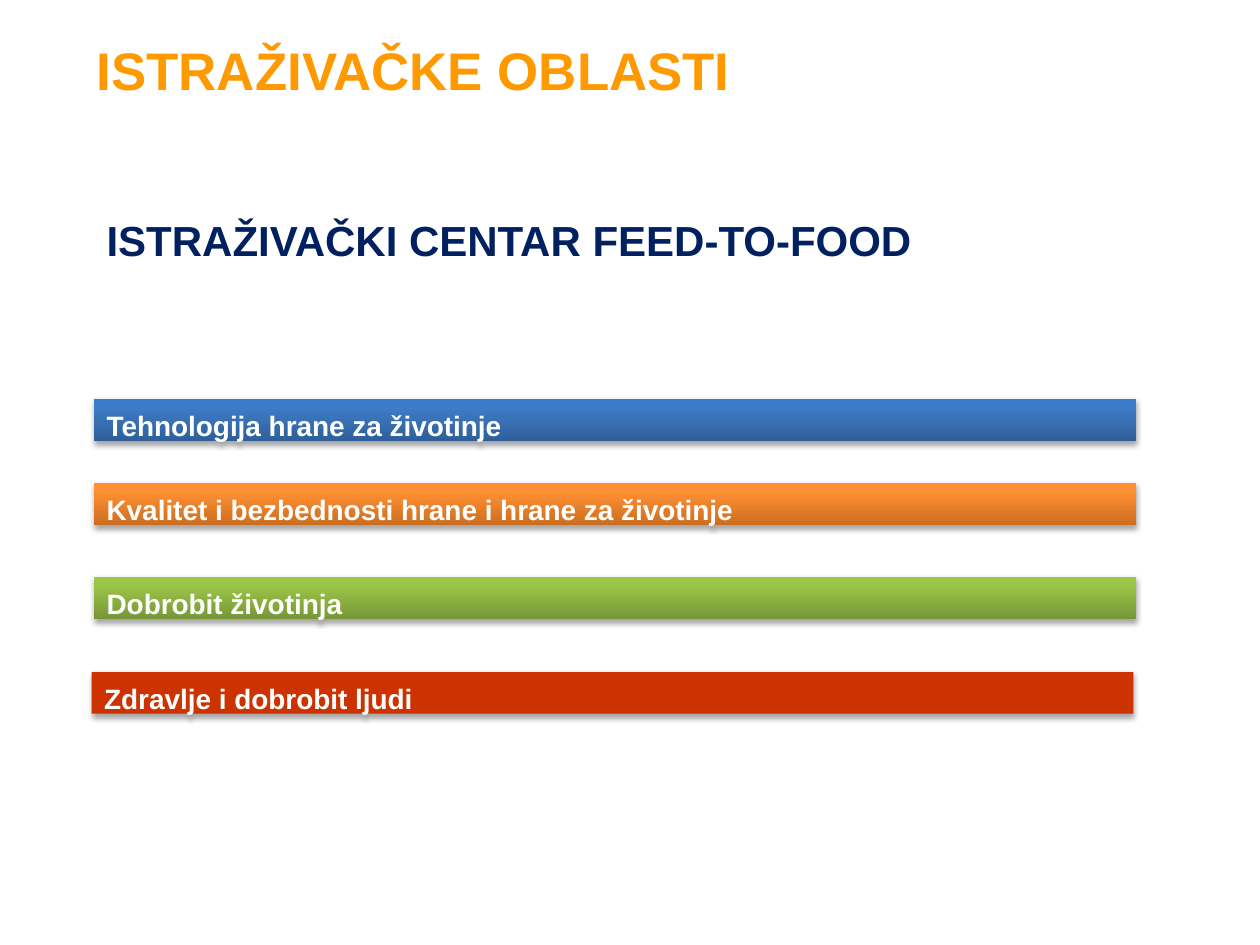
from copy import deepcopy

from lxml import etree
from pptx import Presentation
from pptx.dml.color import RGBColor
from pptx.enum.shapes import MSO_SHAPE
from pptx.enum.text import MSO_ANCHOR, PP_ALIGN
from pptx.oxml.ns import qn
from pptx.util import Cm, Pt

RECTANGLE = MSO_SHAPE.RECTANGLE
TOP, MIDDLE = MSO_ANCHOR.TOP, MSO_ANCHOR.MIDDLE
LEFT = PP_ALIGN.LEFT

BAR_WIDTH, BAR_HEIGHT = 21, 0.84
STOP_POSITIONS = (0, 0.8, 1)

# Left, top, wording and colours (bottom to top) of each research area
AREAS = [
    (1.9, 8.05, "Tehnologija hrane za životinje", ("2F5F99", "3D7CC7", "3A7CCB")),
    (1.9, 9.74, "Kvаlitet i bezbednosti hrаne i hrane za životinje",
     ("CC6E20", "FF9034", "FF9136")),
    (1.9, 11.64, "Dobrobit životinjа", ("779737", "9BC348", "9DC746")),
    (1.85, 13.55, "Zdrаvlje i dobrobit ljudi", ("CC3300",)),
]


def color(value):
    return RGBColor.from_string(value)


def write(shape, text, size, hue, anchor, top_inset, bottom_inset=0.13):
    """Put one bold line of text into a shape."""
    frame = shape.text_frame
    frame.word_wrap = True
    frame.vertical_anchor = anchor
    frame.margin_top, frame.margin_bottom = Cm(top_inset), Cm(bottom_inset)
    para = frame.paragraphs[0]
    para.text = text
    para.alignment = LEFT
    font = para.font
    font.name, font.size, font.bold = "Arial", Pt(size), True
    font.color.rgb = color(hue)
    return para


def add_heading(page, box, text, size, hue, anchor, top_inset):
    heading = page.shapes.add_textbox(*(Cm(length) for length in box))
    return write(heading, text, size, hue, anchor, top_inset)


def paint(shape, hues):
    """Fill with one colour, or with a gradient that rises from the bottom."""
    fill = shape.fill
    if len(hues) == 1:
        fill.solid()
        fill.fore_color.rgb = color(hues[0])
        return
    fill.gradient()
    fill.gradient_angle = 90
    last_stop = shape._element.spPr.findall(".//" + qn("a:gs"))[-1]
    last_stop.addnext(deepcopy(last_stop))
    for stop, position, hue in zip(fill.gradient_stops, STOP_POSITIONS, hues):
        stop.position = position
        stop.color.rgb = color(hue)


def add_shadow(shape):
    """Cast a soft shadow straight down."""
    shape.shadow.inherit = False
    effects = shape._element.spPr.find(qn("a:effectLst"))
    shadow = etree.SubElement(effects, qn("a:outerShdw"), blurRad="40000",
                              dist="23000", dir="5400000", rotWithShape="0")
    black = etree.SubElement(shadow, qn("a:srgbClr"), val="000000")
    etree.SubElement(black, qn("a:alpha"), val="35000")


def add_area_bar(page, box, text, hues):
    bar = page.shapes.add_shape(RECTANGLE, *(Cm(length) for length in box))
    paint(bar, hues)
    bar.line.fill.background()
    add_shadow(bar)
    write(bar, text, 16, "FFFFFF", TOP, 0.18, 0)


def main():
    deck = Presentation()
    deck.slide_width, deck.slide_height = Cm(25.4), Cm(19.05)
    page = deck.slides.add_slide(deck.slide_layouts[6])

    # Headings
    title = add_heading(page, (1.7, 0.64, 13.77, 2.34), "ISTRAŽIVAČKE OBLASTI",
                        30.2, "FF9900", TOP, 0.26)
    title.line_spacing = 0.9
    add_heading(page, (1.9, 3.38, 17.35, 2.74), "ISTRAŽIVAČKI CENTAR FEED-TO-FOOD",
                24, "002060", MIDDLE, 0.31)

    # Research areas
    for left, top, text, hues in AREAS:
        add_area_bar(page, (left, top, BAR_WIDTH, BAR_HEIGHT), text, hues)

    deck.save("out.pptx")


if __name__ == "__main__":
    main()
